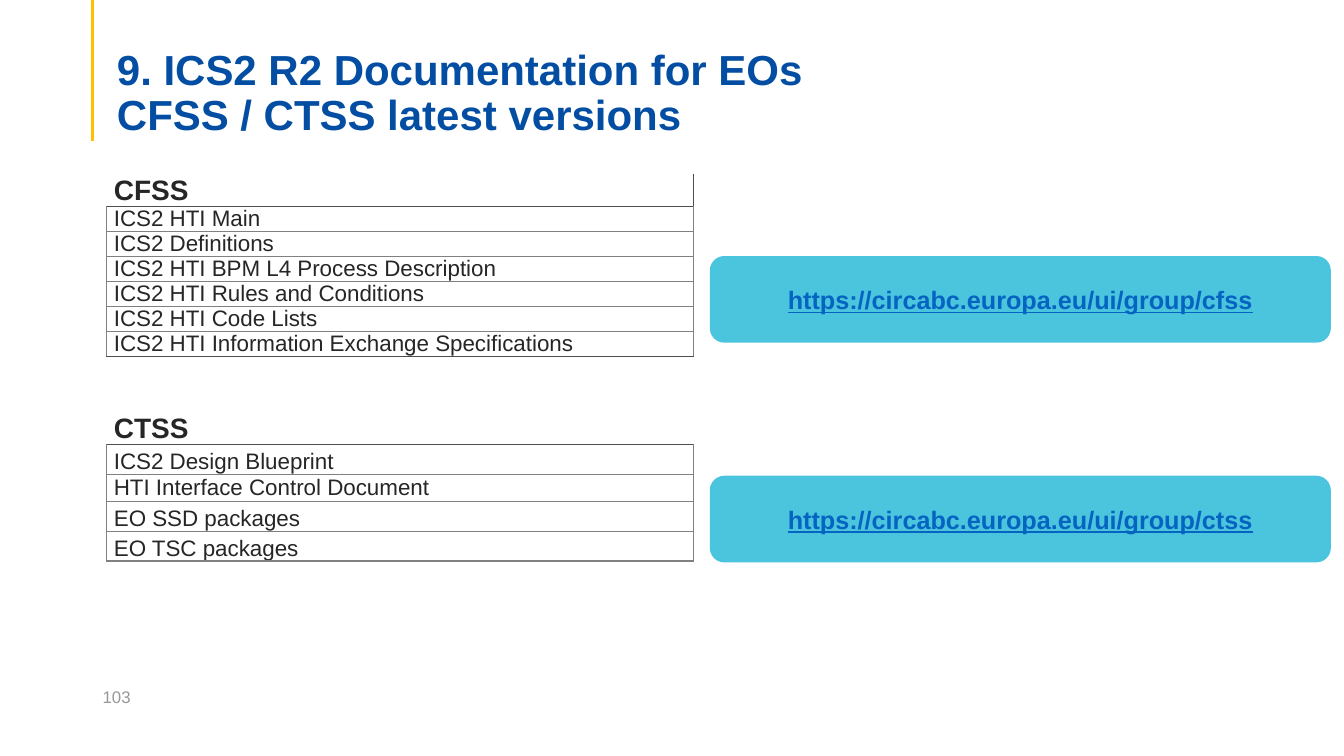
import pptx
import pptx.util
import pptx.dml.color
import pptx.enum.shapes
import pptx.enum.text
import pptx.oxml
import pptx.oxml.ns

Inches = pptx.util.Inches
ANCHOR = pptx.enum.text.MSO_ANCHOR
ALIGN = pptx.enum.text.PP_ALIGN
GREY, DARK = "808080", "4D4D4D"


def add_run(p, text, size, color, bold=False):
    r = p.add_run()
    r.text = text
    r.font.name = "Arial"
    r.font.size = pptx.util.Pt(size)
    r.font.bold = bold
    r.font.color.rgb = pptx.dml.color.RGBColor.from_string(color)
    return r


def set_borders(cell, colors):
    """Draw 1 pt borders; colors are left, right, top, bottom, None for no line."""
    tcPr = cell._tc.get_or_add_tcPr()
    for i, (side, color) in enumerate(zip("LRTB", colors)):
        fill = f'<a:solidFill><a:srgbClr val="{color}"/></a:solidFill>' if color else "<a:noFill/>"
        ns = pptx.oxml.ns.nsdecls("a")
        tcPr.insert(i, pptx.oxml.parse_xml(f'<a:ln{side} {ns} w="12700">{fill}</a:ln{side}>'))


prs = pptx.Presentation()
prs.slide_width, prs.slide_height = Inches(13.33), Inches(7.5)
s = prs.slides.add_slide(prs.slide_layouts[5])

# Accent line
line = s.shapes.add_connector(pptx.enum.shapes.MSO_CONNECTOR.STRAIGHT,
                              Inches(0.92), Inches(0), Inches(0.92), Inches(1.4))
line.line.color.rgb = pptx.dml.color.RGBColor.from_string("FFC000")
line.line.width = pptx.util.Pt(2.25)
line._element.spPr.append(pptx.oxml.parse_xml(f'<a:effectLst {pptx.oxml.ns.nsdecls("a")}/>'))

# Title
title = s.shapes.title
title.left, title.top, title.width, title.height = Inches(1.06), Inches(0.53), Inches(11.5), Inches(0.86)
tf = title.text_frame
tf.word_wrap = True
tf.auto_size = pptx.enum.text.MSO_AUTO_SIZE.NONE
tf.vertical_anchor = ANCHOR.BOTTOM
tf.margin_bottom = 0
for i, text in enumerate(["9. ICS2 R2 Documentation for EOs", "CFSS / CTSS latest versions"]):
    p = tf.add_paragraph() if i else tf.paragraphs[0]
    p.alignment = ALIGN.LEFT
    p.line_spacing = 0.9
    add_run(p, text, 30, "034EA2", bold=True)

# Document list: text, row height, line spacing, borders (left, right, top, bottom)
box = (GREY, GREY, GREY, GREY)
below_heading = (GREY, GREY, DARK, GREY)
rows = [
    ("CFSS", 0.32, 1, (None, DARK, None, DARK)),
    ("ICS2 HTI Main", 0.24, 1, below_heading),
    ("ICS2 Definitions", 0.24, 1, box),
    ("ICS2 HTI BPM L4 Process Description", 0.24, 1, box),
    ("ICS2 HTI Rules and Conditions", 0.24, 1, box),
    ("ICS2 HTI Code Lists", 0.24, 1, box),
    ("ICS2 HTI Information Exchange Specifications", 0.24, 1, (GREY, GREY, GREY, DARK)),
    ("", 0.24, 1, (None, None, DARK, None)),
    ("", 0.24, 1, (None, None, None, None)),
    ("CTSS", 0.32, 1, (None, None, None, DARK)),
    ("ICS2 Design Blueprint", 0.27, 1.15, below_heading),
    ("HTI Interface Control Document", 0.27, 1, box),
    ("EO SSD packages", 0.27, 1.15, box),
    ("EO TSC packages", 0.27, 1.15, box),
]
tbl = s.shapes.add_table(len(rows), 1, Inches(1.06), Inches(1.73), Inches(5.82),
                         Inches(sum(row[1] for row in rows))).table
tbl.first_row = tbl.horz_banding = False
for i, (text, height, spacing, borders) in enumerate(rows):
    tbl.rows[i].height = Inches(height)
    cell = tbl.cell(i, 0)
    cell.fill.background()
    set_borders(cell, borders)
    cell.margin_left = cell.margin_right = Inches(0.07)
    cell.margin_bottom = 0
    is_package_row = height == 0.27
    cell.margin_top = Inches(0.01 if is_package_row else 0)
    cell.vertical_anchor = ANCHOR.TOP if is_package_row else ANCHOR.MIDDLE
    p = cell.text_frame.paragraphs[0]
    p.line_spacing = spacing
    is_heading = text in ("CFSS", "CTSS")
    add_run(p, text, 20 if is_heading else 16, "262626", bold=is_heading)

# Link buttons
for top, group in [(2.54, "cfss"), (4.72, "ctss")]:
    sp = s.shapes.add_shape(pptx.enum.shapes.MSO_SHAPE.ROUNDED_RECTANGLE,
                            Inches(7.04), Inches(top), Inches(6.16), Inches(0.86))
    sp.shadow.inherit = False
    sp.fill.solid()
    sp.fill.fore_color.rgb = pptx.dml.color.RGBColor.from_string("4BC5DE")
    sp.line.fill.background()
    sp.text_frame.vertical_anchor = ANCHOR.MIDDLE
    p = sp.text_frame.paragraphs[0]
    p.alignment = ALIGN.CENTER
    r = add_run(p, f"https://circabc.europa.eu/ui/group/{group}", 18, "0563C1", bold=True)
    r.font.underline = True

# Page number
tf = s.shapes.add_textbox(Inches(0.92), Inches(6.71), Inches(3), Inches(0.4)).text_frame
tf.word_wrap = True
tf.vertical_anchor = ANCHOR.MIDDLE
add_run(tf.paragraphs[0], "103", 12, "979797")

prs.save("out.pptx")
